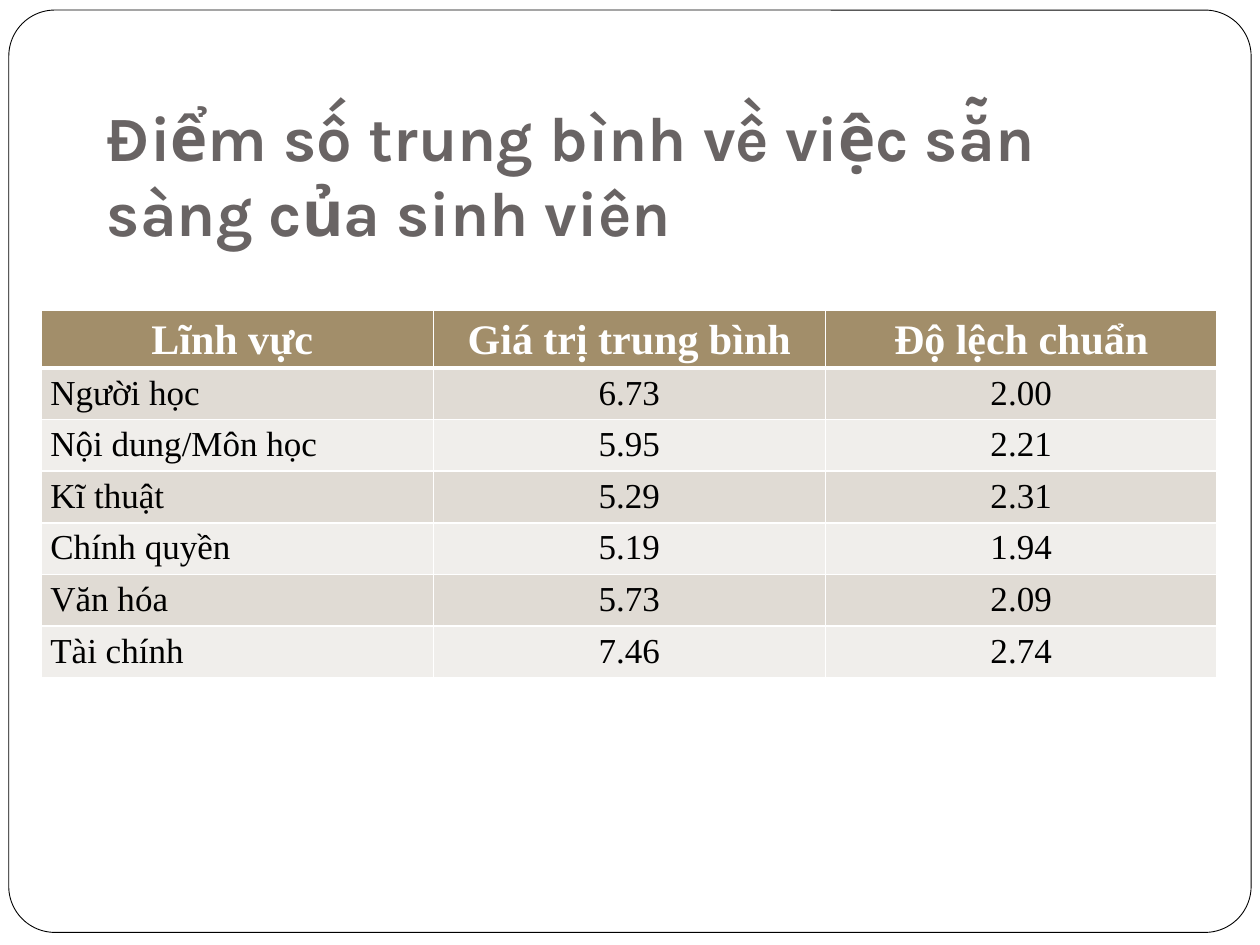
from lxml.etree import SubElement
from pptx import Presentation
from pptx.dml.color import RGBColor
from pptx.enum.shapes import MSO_SHAPE
from pptx.enum.text import MSO_ANCHOR, PP_ALIGN
from pptx.oxml.ns import qn
from pptx.util import Inches, Pt


def rgb(value):
    return RGBColor.from_string(value)


def set_border(cell, side, width):
    ln = SubElement(cell._tc.get_or_add_tcPr(), qn(f"a:ln{side}"), w=str(Pt(width)))
    fill = SubElement(ln, qn("a:solidFill"))
    SubElement(fill, qn("a:srgbClr"), val="FFFFFF")


prs = Presentation()
prs.slide_width = Inches(10)
prs.slide_height = Inches(7.5)
s = prs.slides.add_slide(prs.slide_layouts[6])

frame = s.shapes.add_shape(
    MSO_SHAPE.ROUNDED_RECTANGLE, Inches(0.07), Inches(0.08), Inches(9.86), Inches(7.32)
)
frame.adjustments[0] = 0.05
frame.shadow.inherit = False
frame.fill.solid()
frame.fill.fore_color.rgb = rgb("FFFFFF")
frame.line.color.rgb = rgb("000000")
frame.line.width = Pt(0.5)

title = s.shapes.add_textbox(Inches(0.75), Inches(0.83), Inches(8.5), Inches(1.25))
tf = title.text_frame
tf.word_wrap = True
tf.vertical_anchor = MSO_ANCHOR.BOTTOM
tf.margin_bottom = Inches(0.1)
tf.text = "Điểm số trung bình về việc sẵn sàng của sinh viên"
font = tf.paragraphs[0].runs[0].font
font.name = "Karla"
font.size = Pt(36)
font.bold = True
font.color.rgb = rgb("696464")

rows = [
    ("Lĩnh vực ", "Giá trị trung bình", "Độ lệch chuẩn"),
    ("Người học", "6.73", "2.00"),
    ("Nội dung/Môn học", "5.95", "2.21"),
    ("Kĩ thuật", "5.29", "2.31"),
    ("Chính quyền", "5.19", "1.94"),
    ("Văn hóa", "5.73", "2.09"),
    ("Tài chính", "7.46", "2.74"),
]
table = s.shapes.add_table(
    len(rows), 3, Inches(0.33), Inches(2.46), Inches(9.33), Inches(2.87)
).table
for column in table.columns:
    column.width = Inches(3.11)

for i, row in enumerate(rows):
    table.rows[i].height = Inches(0.41)
    header = i == 0
    band = "A28E6A" if header else "E0DBD4" if i % 2 else "F0EEEB"
    for j, text in enumerate(row):
        cell = table.cell(i, j)
        cell.margin_left = cell.margin_right = Inches(0.07)
        cell.margin_top = cell.margin_bottom = 0
        for side in "LRTB":
            thick = (header and side == "B") or (i == 1 and side == "T")
            set_border(cell, side, 3 if thick else 1)
        cell.fill.solid()
        cell.fill.fore_color.rgb = rgb(band)
        p = cell.text_frame.paragraphs[0]
        p.text = text
        p.line_spacing = 1.15
        p.alignment = PP_ALIGN.CENTER if header or j else PP_ALIGN.LEFT
        font = p.runs[0].font
        font.name = "Times New Roman"
        font.size = Pt(24 if header else 20)
        font.bold = header
        font.color.rgb = rgb("FFFFFF" if header else "000000")

prs.save("out.pptx")
